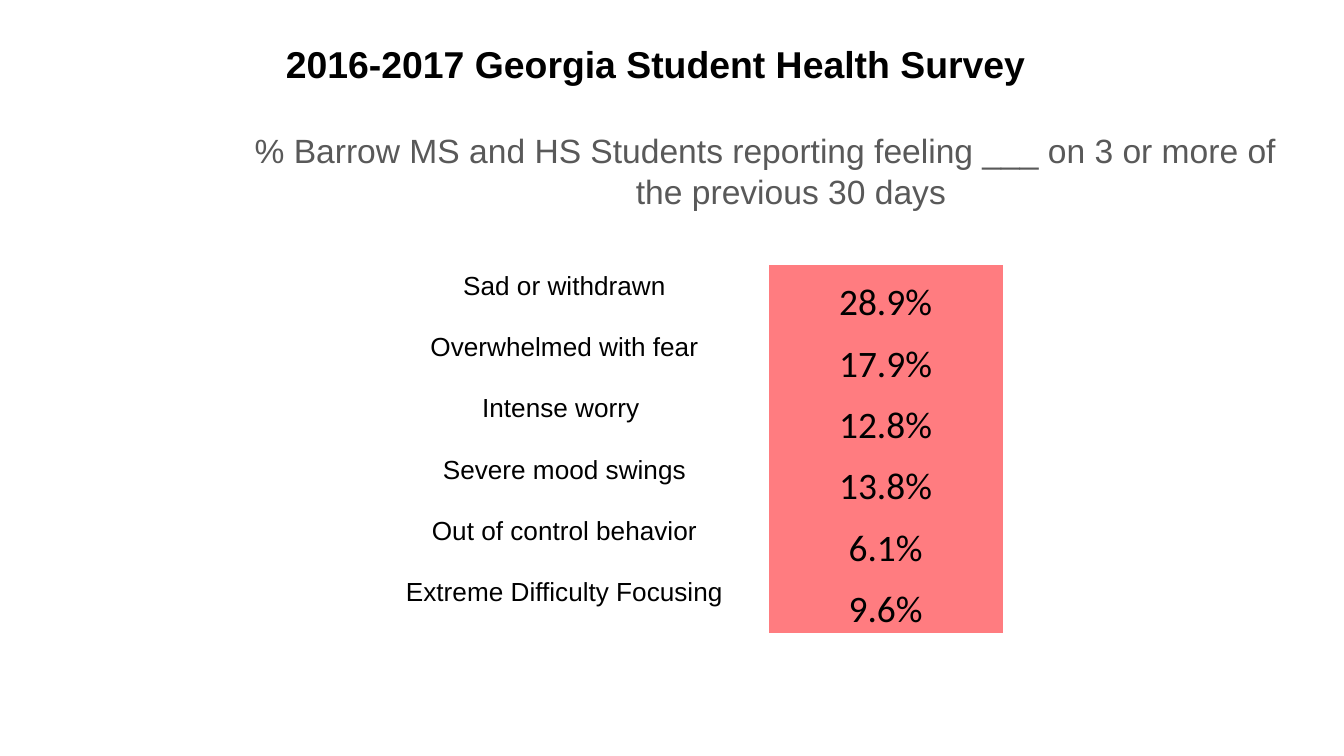
import pptx
import pptx.dml.color
import pptx.enum.text
import pptx.oxml.ns
import pptx.util
from pptx.util import Inches

ALIGN = pptx.enum.text.PP_ALIGN
ANCHOR = pptx.enum.text.MSO_ANCHOR
NO_STYLE_NO_GRID = "{2D5ABB26-0587-4C30-8999-92F81FD0307C}"

FEELINGS = [
    ("Sad or withdrawn", "28.9%"),
    ("Overwhelmed with fear", "17.9%"),
    ("Intense worry ", "12.8%"),
    ("Severe mood swings", "13.8%"),
    ("Out of control behavior", "6.1%"),
    ("Extreme Difficulty Focusing", "9.6%"),
]


def color(hex_string):
    return pptx.dml.color.RGBColor.from_string(hex_string)


def write_text(frame, text, size, font="Arial", ink="000000", bold=False,
               left_margin=0, first_indent=0):
    """Fill the first paragraph of a text frame with centred, formatted text."""
    paragraph = frame.paragraphs[0]
    paragraph.alignment = ALIGN.CENTER
    if left_margin:
        properties = paragraph._p.get_or_add_pPr()
        properties.set("marL", str(Inches(left_margin)))
        properties.set("indent", str(Inches(first_indent)))
    run = paragraph.add_run()
    run.text = text
    run.font.name = font
    run.font.size = pptx.util.Pt(size)
    run.font.bold = bold
    run.font.color.rgb = color(ink)


class SlideBuilder:
    highlight = "FF7C80"
    subtitle_ink = "595959"

    def __init__(self, slide):
        self.slide = slide

    def add_text(self, text, left, top, width, height, anchor=ANCHOR.TOP, **text_format):
        shape = self.slide.shapes.add_textbox(
            Inches(left), Inches(top), Inches(width), Inches(height))
        frame = shape.text_frame
        frame.word_wrap = True
        frame.vertical_anchor = anchor
        frame.margin_left = frame.margin_right = Inches(0.1)
        frame.margin_top = frame.margin_bottom = Inches(0.1)
        write_text(frame, text, **text_format)

    def add_percent_table(self, rows, left, top, column_widths, height):
        """Add a two-column table: plain labels and highlighted percentages."""
        table = self.slide.shapes.add_table(
            len(rows), len(column_widths), Inches(left), Inches(top),
            Inches(sum(column_widths)), Inches(height)).table
        table.first_row = table.horz_banding = False
        style = table._tbl.tblPr.find(pptx.oxml.ns.qn("a:tableStyleId"))
        style.text = NO_STYLE_NO_GRID
        for column, width in zip(table.columns, column_widths):
            column.width = Inches(width)
        for row, (label, percent) in zip(table.rows, rows):
            label_cell, percent_cell = row.cells
            label_cell.fill.background()
            write_text(label_cell.text_frame, label, size=14)

            percent_cell.fill.solid()
            percent_cell.fill.fore_color.rgb = color(self.highlight)
            percent_cell.vertical_anchor = ANCHOR.BOTTOM
            percent_cell.margin_left = percent_cell.margin_right = Inches(0.01)
            percent_cell.margin_top = Inches(0.01)
            percent_cell.margin_bottom = 0
            write_text(percent_cell.text_frame, percent, size=20, font="Calibri")


def main():
    presentation = pptx.Presentation()
    presentation.slide_width = Inches(10)
    presentation.slide_height = Inches(10 * 9 / 16)
    builder = SlideBuilder(presentation.slides.add_slide(presentation.slide_layouts[6]))

    builder.add_text("2016-2017 Georgia Student Health Survey", 0.22, 0.24, 9.32, 0.5,
                     anchor=ANCHOR.BOTTOM, size=20, bold=True)
    builder.add_text("% Barrow MS and HS Students reporting feeling ___ on 3 or more of "
                     "the previous 30 days", 1.61, 0.87, 8.05, 4.53,
                     size=18, ink=builder.subtitle_ink, left_margin=0.5, first_indent=-0.38)
    builder.add_percent_table(FEELINGS, left=2.68, top=1.97,
                              column_widths=(3.04, 1.74), height=2.74)
    presentation.save("out.pptx")


if __name__ == "__main__":
    main()
